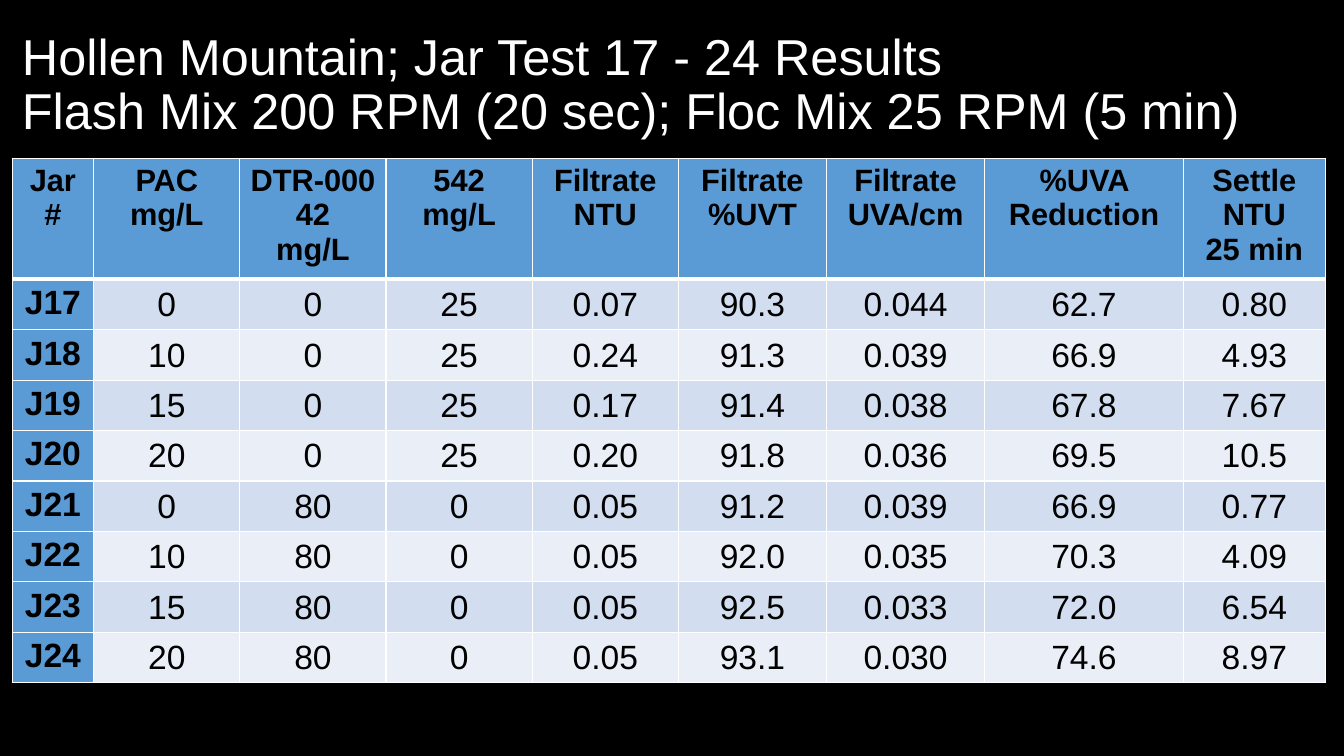
from dataclasses import dataclass

import lxml.etree
import pptx
import pptx.dml.color
import pptx.enum.text
import pptx.oxml.ns
import pptx.util

Pt = pptx.util.Pt
Anchor = pptx.enum.text.MSO_ANCHOR
Align = pptx.enum.text.PP_ALIGN

COLORS = {
    "background": "000000",
    "title": "FFFFFF",
    "text": "000000",
    "border": "FFFFFF",
    "header": "5B9BD5",
    "odd": "D2DEEF",
    "even": "EAEFF7",
}
LEFT, WIDTH = 8.64, 938.16
TITLE = "Hollen Mountain; Jar Test 17 - 24 Results\vFlash Mix 200 RPM (20 sec); Floc Mix 25 RPM (5 min)"
TABLE_HEIGHT, ROW_HEIGHT = 374.4, 29.52


@dataclass(frozen=True)
class Column:
    heading: str
    width: float
    values: tuple[str, ...]


@dataclass(frozen=True)
class CellStyle:
    size: float
    bold: bool
    anchor: Anchor
    side_inset: float
    top_inset: float
    bottom_inset: float


HEADING = CellStyle(22, True, Anchor.TOP, 7.2, 3.6, 3.6)
JAR = CellStyle(24, True, Anchor.TOP, 7.2, 3.6, 3.6)
VALUE = CellStyle(24, False, Anchor.MIDDLE, 0.72, 0.72, 0)

COLUMNS = (
    Column("Jar#", 58.32, tuple(f"J{number}" for number in range(17, 25))),
    Column("PAC\nmg/L", 104.4, ("0", "10", "15", "20") * 2),
    Column("DTR-00042\nmg/L", 104.4, ("0",) * 4 + ("80",) * 4),
    Column("542\nmg/L", 104.4, ("25",) * 4 + ("0",) * 4),
    Column("Filtrate\nNTU", 104.4, ("0.07", "0.24", "0.17", "0.20") + ("0.05",) * 4),
    Column("Filtrate\n%UVT", 105.84,
           ("90.3", "91.3", "91.4", "91.8", "91.2", "92.0", "92.5", "93.1")),
    Column("Filtrate\nUVA/cm", 113.04,
           ("0.044", "0.039", "0.038", "0.036", "0.039", "0.035", "0.033", "0.030")),
    Column("%UVA Reduction", 141.84,
           ("62.7", "66.9", "67.8", "69.5", "66.9", "70.3", "72.0", "74.6")),
    Column("Settle\nNTU\n25 min", 101.52,
           ("0.80", "4.93", "7.67", "10.5", "0.77", "4.09", "6.54", "8.97")),
)


def color(name: str) -> pptx.dml.color.RGBColor:
    return pptx.dml.color.RGBColor.from_string(COLORS[name])


def apply(target: object, values: dict[str, object]) -> None:
    for name, value in values.items():
        setattr(target, name, value)


def format_para(para: object, size: float, bold: bool, color_name: str) -> None:
    for span in para.runs:
        apply(span.font, {"name": "Arial", "size": Pt(size), "bold": bold})
        span.font.color.rgb = color(color_name)


def draw_borders(cell: object, top: float, bottom: float) -> None:
    qn = pptx.oxml.ns.qn
    properties = cell._tc.get_or_add_tcPr()
    widths = {"a:lnL": 1, "a:lnR": 1, "a:lnT": top, "a:lnB": bottom}
    for index, (tag, width) in enumerate(widths.items()):
        line = lxml.etree.Element(qn(tag), w=str(Pt(width)))
        fill = lxml.etree.SubElement(line, qn("a:solidFill"))
        lxml.etree.SubElement(fill, qn("a:srgbClr"), val=COLORS["border"])
        properties.insert(index, line)


def draw_cell(cell: object, text: str, style: CellStyle, fill_name: str) -> None:
    cell.text = text
    apply(cell, {
        "vertical_anchor": style.anchor,
        "margin_left": Pt(style.side_inset),
        "margin_right": Pt(style.side_inset),
        "margin_top": Pt(style.top_inset),
        "margin_bottom": Pt(style.bottom_inset),
    })
    for para in cell.text_frame.paragraphs:
        para.alignment = Align.CENTER
        format_para(para, style.size, style.bold, "text")
    cell.fill.solid()
    cell.fill.fore_color.rgb = color(fill_name)


def draw_title(page: object) -> None:
    box = page.shapes.add_textbox(Pt(LEFT), Pt(9.36), Pt(WIDTH), Pt(104.4))
    apply(box.text_frame, {"word_wrap": True, "vertical_anchor": Anchor.MIDDLE})
    para = box.text_frame.paragraphs[0]
    para.text = TITLE
    para.line_spacing = 0.9
    format_para(para, 36, False, "title")


def draw_table(page: object) -> None:
    row_count = len(COLUMNS[0].values) + 1
    frame = page.shapes.add_table(
        row_count, len(COLUMNS), Pt(LEFT), Pt(113.04), Pt(WIDTH), Pt(TABLE_HEIGHT))
    table = frame.table
    apply(table, {"first_col": True, "horz_banding": False})
    # Rows grow from this least height to fit their text
    for row in table.rows:
        row.height = Pt(ROW_HEIGHT)
    for column_index, column in enumerate(COLUMNS):
        table.columns[column_index].width = Pt(column.width)
        for row_index, text in enumerate((column.heading, *column.values)):
            cell = table.cell(row_index, column_index)
            if row_index == 0:
                style, fill_name = HEADING, "header"
            elif column_index == 0:
                style, fill_name = JAR, "header"
            else:
                style, fill_name = VALUE, "odd" if row_index % 2 else "even"
            draw_cell(cell, text, style, fill_name)
            # A thick rule parts the headings from the results
            draw_borders(cell, 3 if row_index == 1 else 1, 3 if row_index == 0 else 1)
    frame.height = Pt(TABLE_HEIGHT)


def main() -> None:
    # Deck and black page
    deck = pptx.Presentation()
    apply(deck, {"slide_width": Pt(960), "slide_height": Pt(540)})
    page = deck.slides.add_slide(deck.slide_layouts[6])
    page.background.fill.solid()
    page.background.fill.fore_color.rgb = color("background")

    # Title and results table
    draw_title(page)
    draw_table(page)
    deck.save("out.pptx")


if __name__ == "__main__":
    main()
